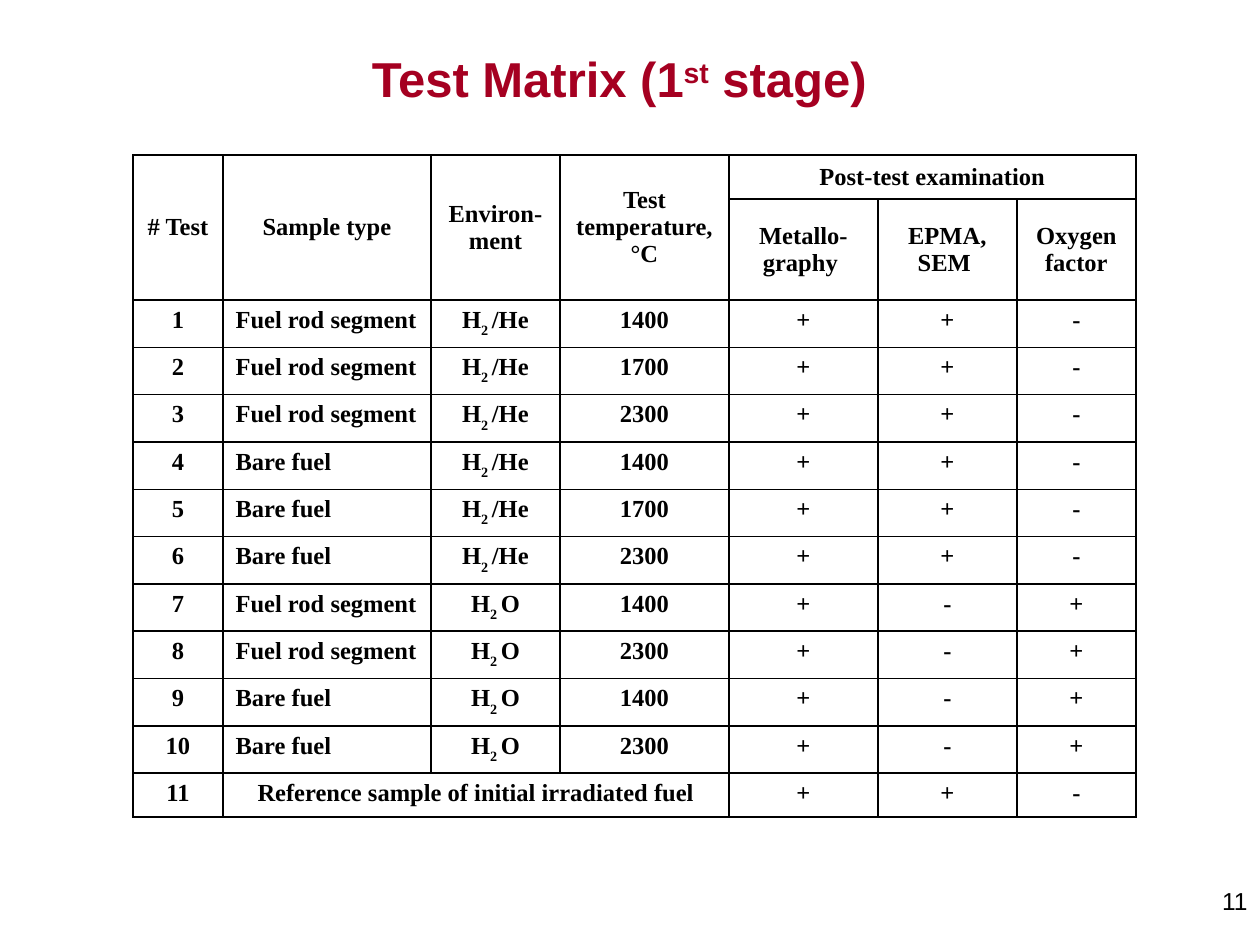
from lxml import etree
from pptx import Presentation
from pptx.dml.color import RGBColor
from pptx.enum.text import MSO_ANCHOR, PP_ALIGN
from pptx.oxml.ns import qn
from pptx.util import Emu, Pt

LEFT, CENTER, RIGHT = PP_ALIGN.LEFT, PP_ALIGN.CENTER, PP_ALIGN.RIGHT
TOP, MIDDLE = MSO_ANCHOR.TOP, MSO_ANCHOR.MIDDLE
BLACK = RGBColor(0x00, 0x00, 0x00)
CRIMSON = RGBColor(0xA5, 0x00, 0x21)
SANS, SERIF = "Arial", "Times New Roman"

PX_PER_INCH = 126
HANGING = 48
COLUMN_WIDTHS = [90, 208, 129, 169, 149, 139, 119]
ROW_HEIGHTS = [44, 101] + [47] * 10 + [44]

HYDROGEN_HELIUM = [("Н", 0), ("2 ", -30), ("/Не", 0)]
STEAM = [("Н", 0), ("2 ", -30), ("О", 0)]
ROD, BARE = "Fuel rod segment", "Bare fuel"
TESTS = [
    (ROD, HYDROGEN_HELIUM, "1400", "++-"),
    (ROD, HYDROGEN_HELIUM, "1700", "++-"),
    (ROD, HYDROGEN_HELIUM, "2300", "++-"),
    (BARE, HYDROGEN_HELIUM, "1400", "++-"),
    (BARE, HYDROGEN_HELIUM, "1700", "++-"),
    (BARE, HYDROGEN_HELIUM, "2300", "++-"),
    (ROD, STEAM, "1400", "+-+"),
    (ROD, STEAM, "2300", "+-+"),
    (BARE, STEAM, "1400", "+-+"),
    (BARE, STEAM, "2300", "+-+"),
]
TALL_HEADERS = [
    ("# Test", True),
    ("Sample type", True),
    ("Environ-ment", False),
    ("Test temperature,°С", False),
]
EXAMINATIONS = ["Metallo-graphy ", "EPMA,\nSEM ", "Oxygen factor"]


def px(length):
    return Emu(round(length * 914400 / PX_PER_INCH))


def add_run(paragraph, text, size, font_name, color, bold=False, italic=False, baseline=0):
    run = paragraph.add_run()
    run.text = text
    font = run.font
    font.size, font.name = Pt(size), font_name
    font.bold, font.italic = bold, italic
    font.color.rgb = color
    if baseline:
        font._element.set("baseline", str(baseline * 1000))


def add_text_box(slide, box, align, anchor):
    shape = slide.shapes.add_textbox(*(px(length) for length in box))
    frame = shape.text_frame
    frame.word_wrap = True
    frame.vertical_anchor = anchor
    paragraph = frame.paragraphs[0]
    paragraph.alignment = align
    return paragraph


def add_title(slide, box):
    paragraph = add_text_box(slide, box, CENTER, MIDDLE)
    for text, baseline in [("Test Matrix (1", 0), ("st", 30), (" stage)", 0)]:
        add_run(paragraph, text, 28, SANS, CRIMSON, bold=True, baseline=baseline)
    add_run(paragraph, " ", 44, SANS, BLACK, italic=True)


def add_page_number(slide, box):
    paragraph = add_text_box(slide, box, RIGHT, TOP)
    add_run(paragraph, "11", 14, SANS, BLACK)


def style_cell(cell):
    properties = cell._tc.get_or_add_tcPr()
    for side in ("a:lnL", "a:lnR", "a:lnT", "a:lnB"):
        line = etree.SubElement(properties, qn(side), w=str(Pt(1)))
        fill = etree.SubElement(line, qn("a:solidFill"))
        etree.SubElement(fill, qn("a:srgbClr"), val=str(BLACK))
    cell.fill.background()


def write_cell(cell, content, align=CENTER, anchor=TOP, hanging=True):
    cell.vertical_anchor = anchor
    paragraph = cell.text_frame.paragraphs[0]
    paragraph.alignment = align
    if hanging:
        properties = paragraph._p.get_or_add_pPr()
        properties.set("marL", str(px(HANGING)))
        properties.set("indent", str(-px(HANGING)))
    runs = [(content, 0)] if isinstance(content, str) else content
    for text, baseline in runs:
        for index, part in enumerate(text.split("\n")):
            if index:
                paragraph.add_line_break()
            add_run(paragraph, part, 14, SERIF, BLACK, bold=True, baseline=baseline)


def add_header_rows(table):
    for column, (text, hanging) in enumerate(TALL_HEADERS):
        table.cell(0, column).merge(table.cell(1, column))
        write_cell(table.cell(0, column), text, anchor=MIDDLE, hanging=hanging)
    table.cell(0, 4).merge(table.cell(0, 6))
    write_cell(table.cell(0, 4), "Post-test examination", anchor=MIDDLE)
    for column, text in enumerate(EXAMINATIONS, 4):
        write_cell(table.cell(1, column), text, anchor=MIDDLE, hanging=False)


def add_test_rows(table):
    for number, (sample, environment, temperature, marks) in enumerate(TESTS, 1):
        contents = [str(number), sample, environment, temperature, *marks]
        for column, content in enumerate(contents):
            align = LEFT if column == 1 else CENTER
            write_cell(table.cell(number + 1, column), content, align)


def add_reference_row(table):
    row = len(ROW_HEIGHTS) - 1
    table.cell(row, 1).merge(table.cell(row, 3))
    write_cell(table.cell(row, 0), str(len(TESTS) + 1))
    write_cell(table.cell(row, 1), "Reference sample of initial irradiated fuel")
    for column, mark in enumerate("++-", 4):
        write_cell(table.cell(row, column), mark)


def add_test_matrix(slide, left, top):
    shape = slide.shapes.add_table(
        len(ROW_HEIGHTS), len(COLUMN_WIDTHS), px(left), px(top),
        px(sum(COLUMN_WIDTHS)), px(sum(ROW_HEIGHTS)))
    table = shape.table
    table.first_row = table.horz_banding = False
    for column, width in zip(table.columns, COLUMN_WIDTHS):
        column.width = px(width)
    for row, height in zip(table.rows, ROW_HEIGHTS):
        row.height = px(height)
    for cell in table.iter_cells():
        style_cell(cell)
    add_header_rows(table)
    add_test_rows(table)
    add_reference_row(table)


def main():
    presentation = Presentation()
    presentation.slide_width, presentation.slide_height = px(1260), px(945)
    slide = presentation.slides.add_slide(presentation.slide_layouts[6])
    add_page_number(slide, (1100, 880, 160, 65))
    add_title(slide, (63, 38, 1134, 58))
    add_test_matrix(slide, 133, 155)
    presentation.save("out.pptx")


if __name__ == "__main__":
    main()
